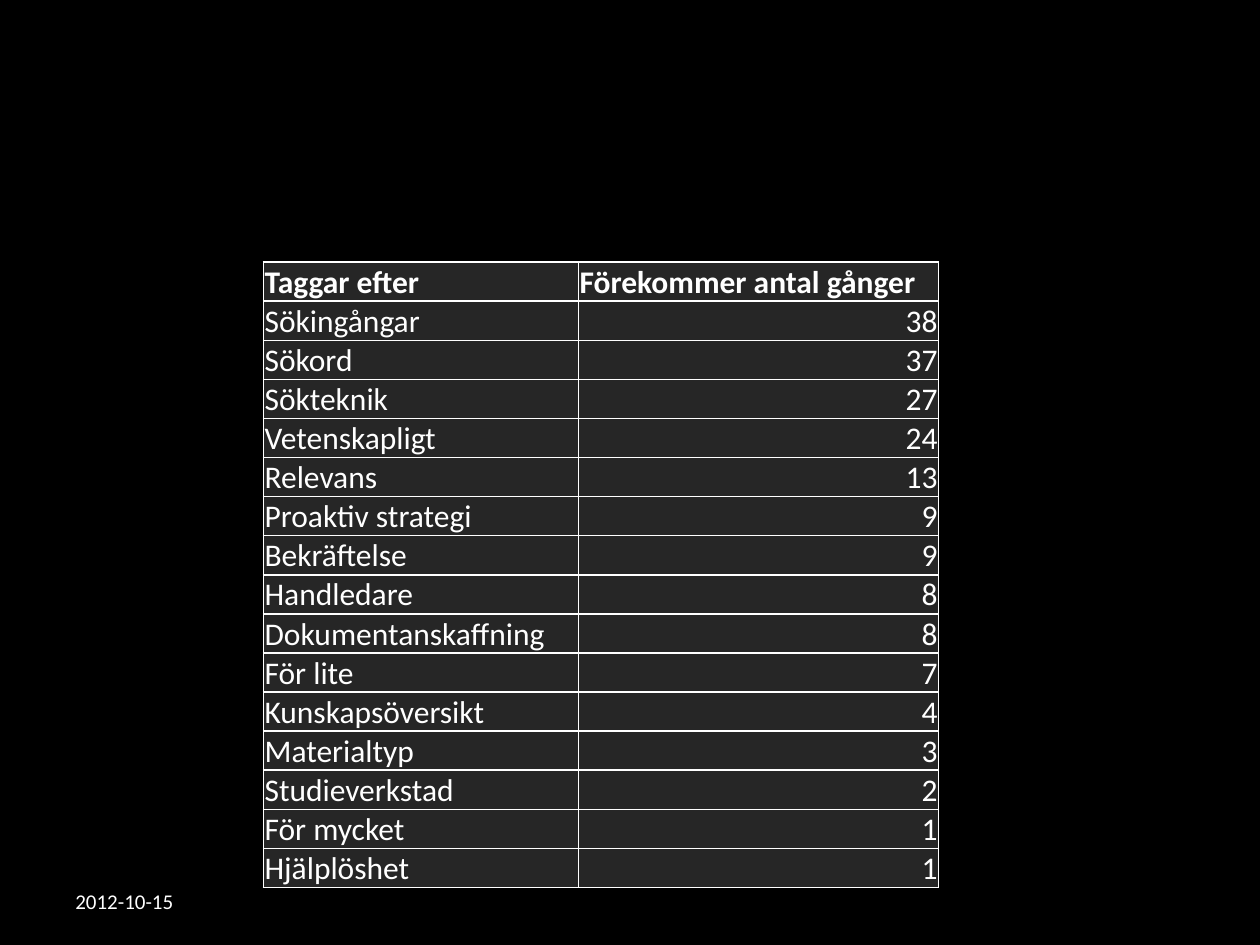
from lxml.etree import SubElement
from pptx import Presentation
from pptx.dml.color import RGBColor
from pptx.enum.text import MSO_ANCHOR, PP_ALIGN
from pptx.oxml.ns import qn
from pptx.util import Inches, Pt

DATE = "2012-10-15"
HEADER = ("Taggar efter", "Förekommer antal gånger")
TAGS = [
    ("Sökingångar", 38),
    ("Sökord", 37),
    ("Sökteknik", 27),
    ("Vetenskapligt", 24),
    ("Relevans", 13),
    ("Proaktiv strategi", 9),
    ("Bekräftelse", 9),
    ("Handledare", 8),
    ("Dokumentanskaffning", 8),
    ("För lite", 7),
    ("Kunskapsöversikt", 4),
    ("Materialtyp", 3),
    ("Studieverkstad", 2),
    ("För mycket", 1),
    ("Hjälplöshet", 1),
]
COLORS = {"background": "000000", "cell": "262626", "text": "FFFFFF", "border": "FFFFFF"}
FONT = "Calibri"
COL_WIDTHS = (2.5, 2.86)
ROW_HEIGHT = 0.31
TABLE_LEFT, TABLE_TOP = 2.09, 2.08


def color(name):
    return RGBColor.from_string(COLORS[name])


def write(tf, text, size, bold=False, align=PP_ALIGN.LEFT):
    p = tf.paragraphs[0]
    p.text = str(text)
    p.alignment = align
    font = p.runs[0].font
    font.name, font.size, font.bold = FONT, Pt(size), bold
    font.color.rgb = color("text")


def add_borders(cell):
    tcPr = cell._tc.get_or_add_tcPr()
    for side in ("lnL", "lnR", "lnT", "lnB"):
        ln = SubElement(tcPr, qn(f"a:{side}"), w=str(Pt(1)))
        fill = SubElement(ln, qn("a:solidFill"))
        SubElement(fill, qn("a:srgbClr"), val=COLORS["border"])


def style_cell(cell):
    add_borders(cell)
    cell.fill.solid()
    cell.fill.fore_color.rgb = color("cell")
    cell.vertical_anchor = MSO_ANCHOR.BOTTOM
    cell.margin_left = cell.margin_right = cell.margin_top = Inches(0.01)
    cell.margin_bottom = 0


def add_tag_table(slide):
    rows = [HEADER, *TAGS]
    table = slide.shapes.add_table(
        len(rows), len(HEADER), Inches(TABLE_LEFT), Inches(TABLE_TOP),
        Inches(sum(COL_WIDTHS)), Inches(ROW_HEIGHT * len(rows))).table
    table.horz_banding = False
    for column, width in zip(table.columns, COL_WIDTHS):
        column.width = Inches(width)
    for r, row in enumerate(rows):
        for c, value in enumerate(row):
            cell = table.cell(r, c)
            style_cell(cell)
            align = PP_ALIGN.RIGHT if isinstance(value, int) else PP_ALIGN.LEFT
            write(cell.text_frame, value, 18, bold=r == 0, align=align)


def add_date(slide):
    box = slide.shapes.add_textbox(Inches(0.5), Inches(6.95), Inches(2.33), Inches(0.4))
    tf = box.text_frame
    tf.word_wrap = True
    tf.vertical_anchor = MSO_ANCHOR.MIDDLE
    write(tf, DATE, 12)


def main():
    prs = Presentation()
    prs.slide_width, prs.slide_height = Inches(10), Inches(7.5)
    s = prs.slides.add_slide(prs.slide_layouts[6])
    s.background.fill.solid()
    s.background.fill.fore_color.rgb = color("background")
    add_date(s)
    add_tag_table(s)
    prs.save("out.pptx")


if __name__ == "__main__":
    main()
